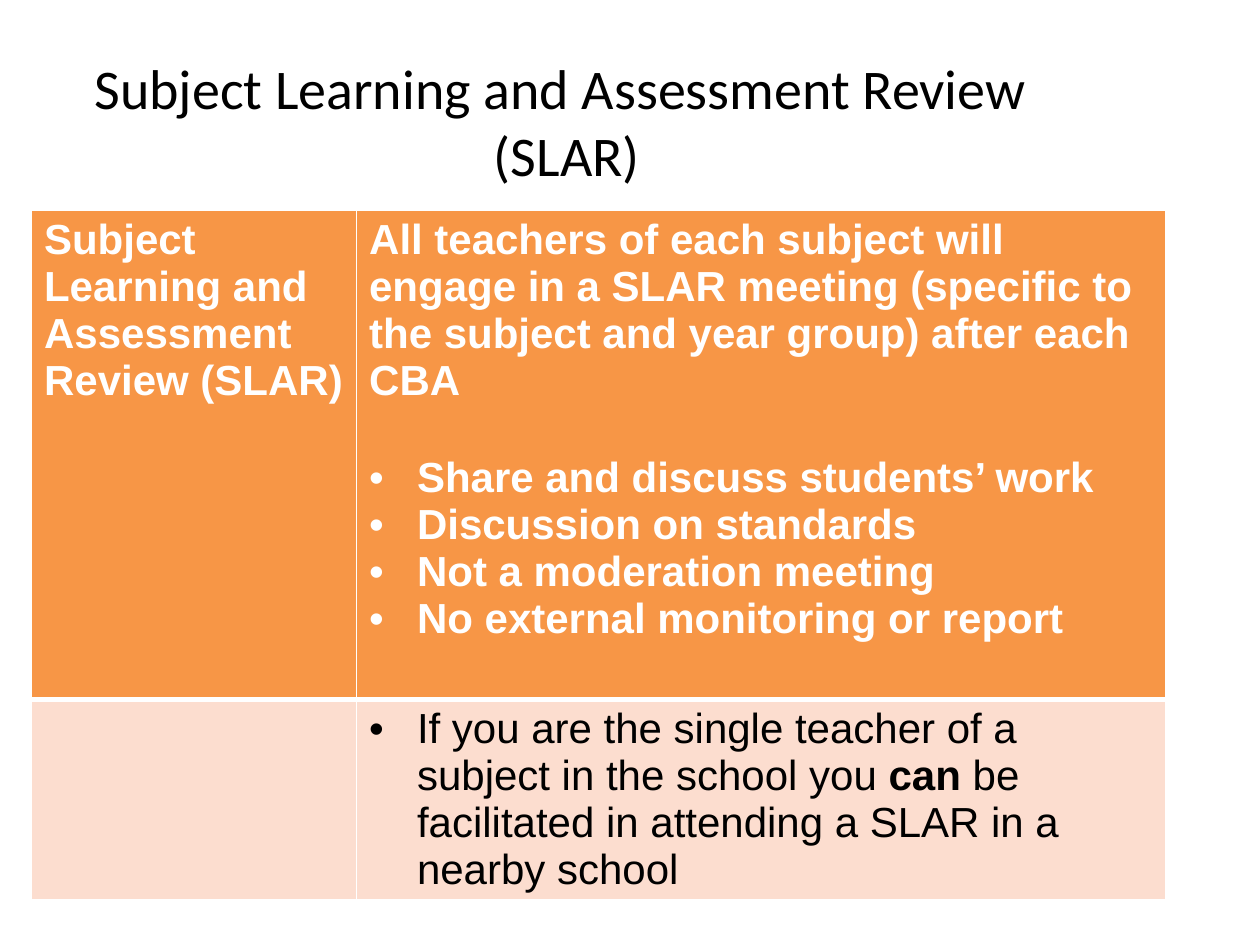
from dataclasses import dataclass

from lxml.etree import SubElement
from pptx import Presentation
from pptx.dml.color import RGBColor as RGB
from pptx.enum.text import MSO_ANCHOR as Anchor, PP_ALIGN as Align
from pptx.oxml.ns import qn
from pptx.util import Inches, Pt


@dataclass(frozen=True)
class Theme:
    title_font: str = "Calibri"
    body_font: str = "Arial"
    title_size: int = 32
    body_size: int = 24
    dark: str = "000000"
    light: str = "FFFFFF"
    header_fill: str = "F79646"
    body_fill: str = "FCDDCF"
    indent: float = 0.38
    gap: int = 29
    rule: int = 1
    header_rule: int = 3


def set_font(font, color, **values):
    for name, value in values.items():
        setattr(font, name, value)
    font.color.rgb = RGB.from_string(color)


class SlideBuilder:
    def __init__(self, prs, theme):
        self.theme = theme
        self.slide = prs.slides.add_slide(prs.slide_layouts[5])

    def title(self, text, left, top, width, height):
        t, sp = self.theme, self.slide.shapes.title
        box = dict(left=left, top=top, width=width, height=height)
        for name, value in box.items():
            setattr(sp, name, Inches(value))
        tf = sp.text_frame
        tf.text = text
        tf.word_wrap, tf.vertical_anchor = True, Anchor.MIDDLE
        p = tf.paragraphs[0]
        p.alignment = Align.CENTER
        for r in p.runs:
            set_font(r.font, t.dark, name=t.title_font, size=Pt(t.title_size))

    def table(self, rows, left, top, col_widths, row_heights):
        """Each row is a list of cells; a cell is a list of (bulleted, runs)."""
        t = self.theme
        frame = self.slide.shapes.add_table(
            len(rows), len(col_widths), Inches(left), Inches(top),
            Inches(sum(col_widths)), Inches(sum(row_heights)))
        table = frame.table
        for col, width in zip(table.columns, col_widths):
            col.width = Inches(width)
        for i, (row, height) in enumerate(zip(rows, row_heights)):
            table.rows[i].height = Inches(height)
            header = i == 0
            for j, content in enumerate(row):
                cell = table.cell(i, j)
                self.borders(cell, t.header_rule if header else t.rule,
                             t.rule if header else t.header_rule)
                cell.fill.solid()
                cell.fill.fore_color.rgb = RGB.from_string(
                    t.header_fill if header else t.body_fill)
                self.cell_text(cell.text_frame, content,
                               t.light if header else t.dark)

    def borders(self, cell, bottom, top):
        tc_pr = cell._tc.get_or_add_tcPr()
        widths = dict(L=self.theme.rule, R=self.theme.rule, T=top, B=bottom)
        for side, width in widths.items():
            ln = SubElement(tc_pr, qn(f"a:ln{side}"), w=str(Pt(width)))
            fill = SubElement(ln, qn("a:solidFill"))
            SubElement(fill, qn("a:srgbClr"), val=self.theme.light)

    def cell_text(self, tf, content, color):
        t = self.theme
        after_bullet = False
        for i, (bulleted, runs) in enumerate(content):
            p = tf.paragraphs[0] if i == 0 else tf.add_paragraph()
            if i and bulleted and not after_bullet:
                p.space_before = Pt(t.gap)
            if bulleted:
                self.bullet(p)
            after_bullet = bulleted
            for text, bold in runs:
                r = p.add_run()
                r.text = text
                set_font(r.font, color, name=t.body_font,
                         size=Pt(t.body_size), bold=bold)

    def bullet(self, p):
        indent = Inches(self.theme.indent)
        p_pr = p._p.get_or_add_pPr()
        p_pr.set("marL", str(indent))
        p_pr.set("indent", str(-indent))
        SubElement(p_pr, qn("a:buFont"), typeface=self.theme.body_font)
        SubElement(p_pr, qn("a:buChar"), char="•")


MEETING_POINTS = [
    "Share and discuss students’ work",
    "Discussion on standards",
    "Not a moderation meeting",
    "No external monitoring or report",
]

HEADER_ROW = [
    [(False, [("Subject Learning and Assessment Review (SLAR)", True)])],
    [(False, [("All teachers of each subject will engage in a SLAR meeting "
               "(specific to the subject and year group) after each CBA",
               True)])]
    + [(True, [(point, True)]) for point in MEETING_POINTS],
]

SINGLE_TEACHER_ROW = [
    [],
    [(True, [("If you are the single teacher of a subject in the school you ",
              False),
             ("can", True),
             (" be facilitated in attending a SLAR in a nearby school",
              False)])],
]


def main():
    prs = Presentation()
    prs.slide_width, prs.slide_height = Inches(10), Inches(7.5)
    s = SlideBuilder(prs, Theme())
    s.title("Subject Learning and Assessment Review \v(SLAR)",
            0, 0.33, 9, 1.25)
    s.table([HEADER_ROW, SINGLE_TEACHER_ROW], 0.25, 1.67,
            col_widths=[2.58, 6.42], row_heights=[3.88, 1.59])
    prs.save("out.pptx")


if __name__ == "__main__":
    main()
